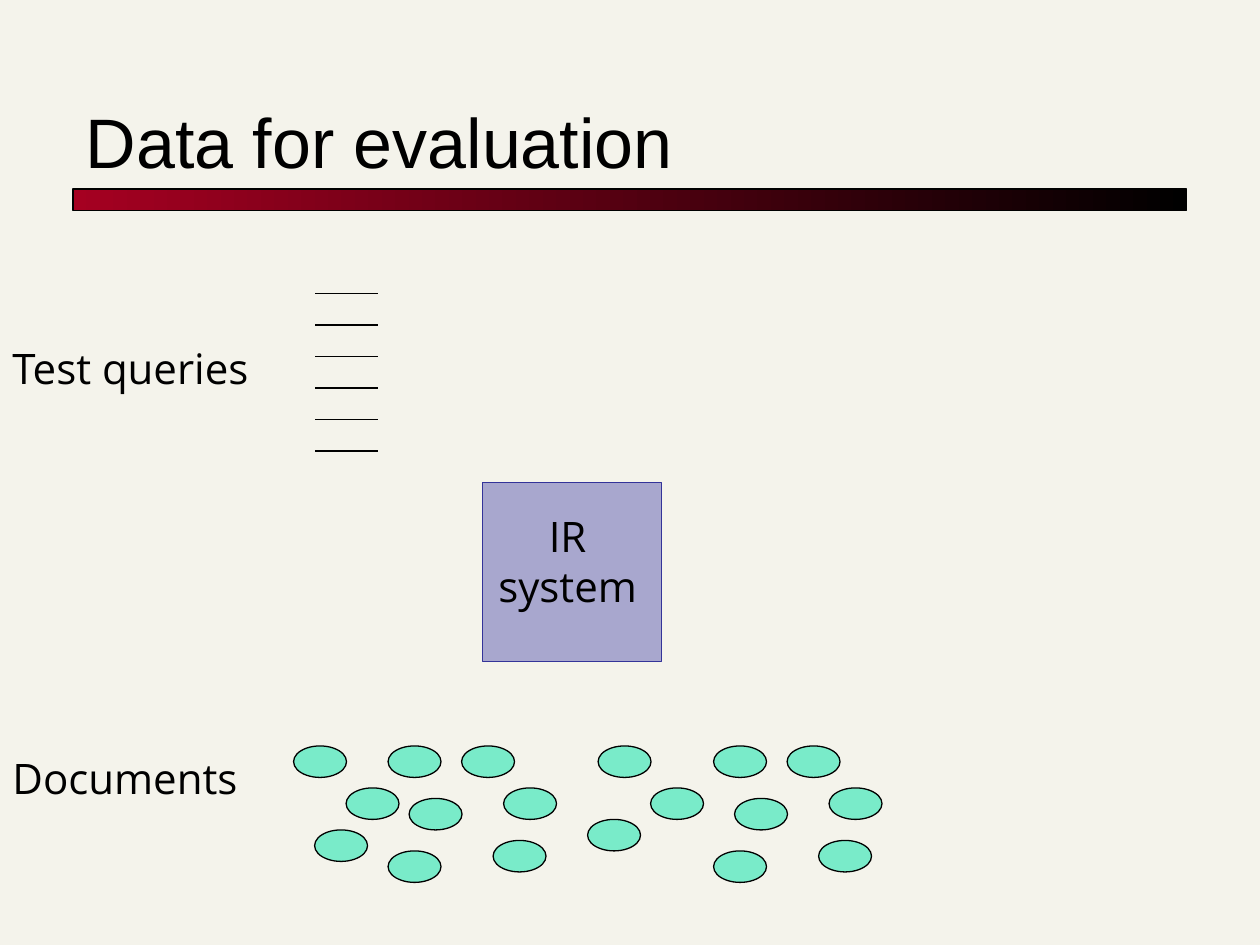
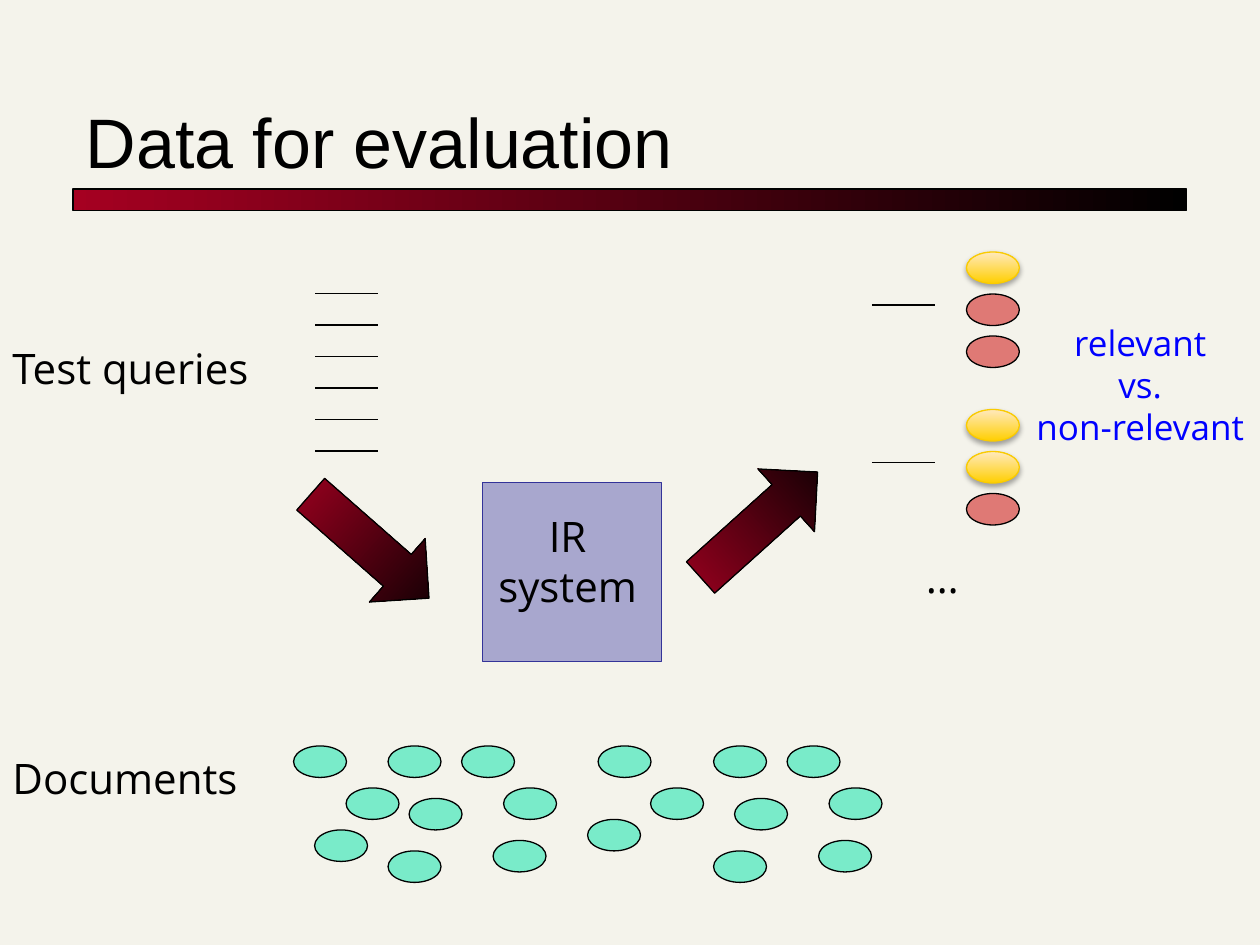
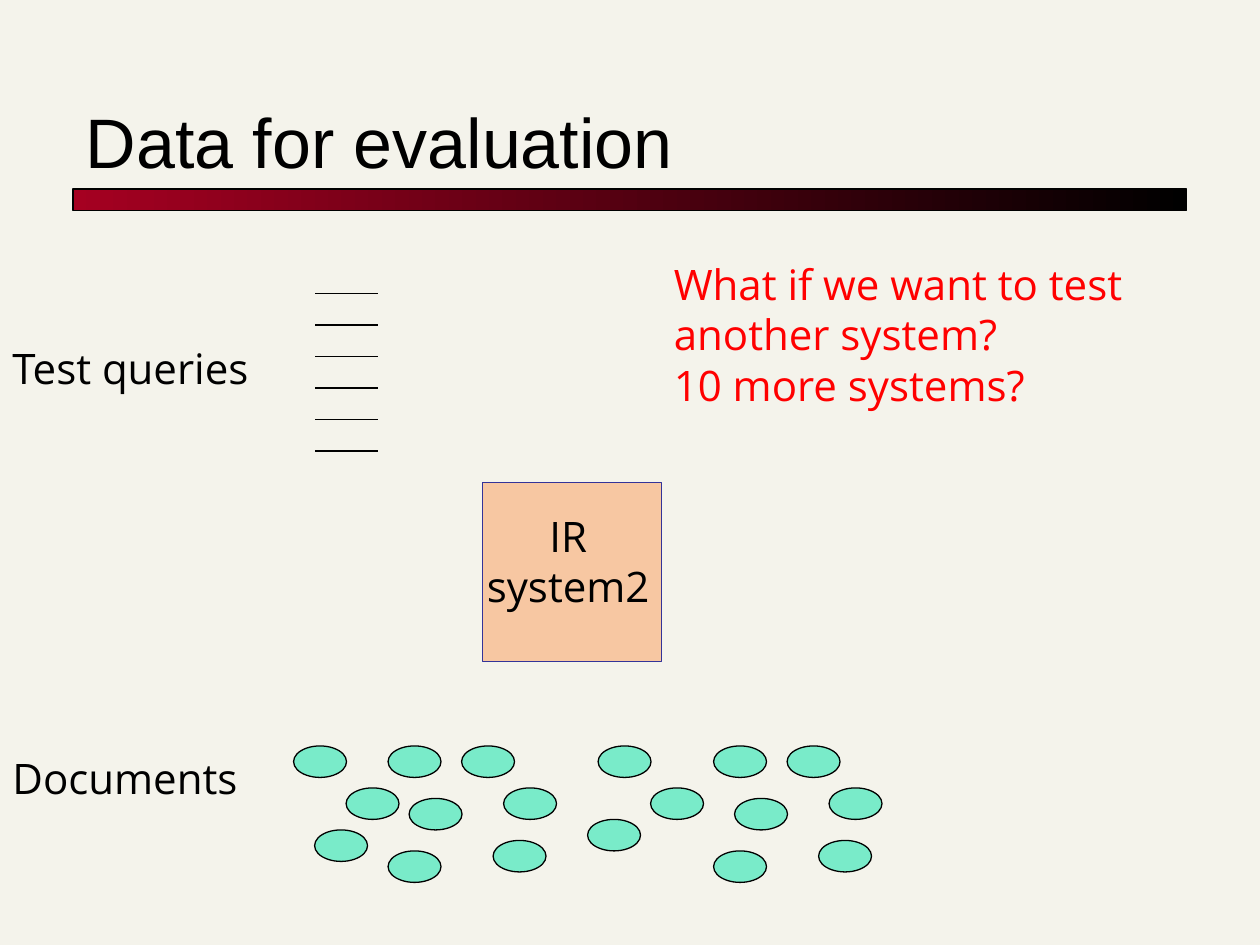
import pptx
import pptx.dml.color
import pptx.enum.shapes
import pptx.enum.text
import pptx.oxml.ns
import pptx.util
from lxml import etree
from pptx.util import Inches

SHAPE = pptx.enum.shapes.MSO_SHAPE
ALIGN = pptx.enum.text.PP_ALIGN
AUTO_SIZE = pptx.enum.text.MSO_AUTO_SIZE
qn = pptx.oxml.ns.qn

TITLE_FONT, BODY_FONT = "Arial", "Open Sans"
BACKGROUND, BLACK = "F4F3EB", "000000"
BAND_COLORS = ("A50021", BLACK)
GOLD_COLORS, GOLD_LINE = ("FFCF01", "FFE9BD"), "FACB00"
DOCUMENT, NON_RELEVANT = "00E4A8", "CC0000"
SYSTEM_LINE, SYSTEM_ONE, SYSTEM_TWO = "333399", "000090", "FF6600"
BLUE, RED = "0000FF", "FF0000"

OVAL_SIZE = (0.42, 0.25)
DOCUMENT_GRID = 1 / 12
DOCUMENT_CELLS = [
    (9, 0), (16, 0), (20, 4), (11, 5), (5, 4), (2, 8), (0, 0), (9, 10), (29, 0),
    (19, 9), (28, 7), (34, 4), (40, 0), (47, 0), (51, 4), (42, 5), (40, 10), (50, 9),
]


def color(hex_string):
    return pptx.dml.color.RGBColor.from_string(hex_string)


def fill_solid(shape, hex_string, opacity):
    """Fill with one colour; opacity is in percent."""
    shape.fill.solid()
    shape.fill.fore_color.rgb = color(hex_string)
    rgb = shape.fill._xPr.find(qn("a:solidFill"))[0]
    etree.SubElement(rgb, qn("a:alpha"), val=str(opacity * 1000))


def fill_gradient(shape, hex_strings, angle=0):
    shape.fill.gradient()
    shape.fill.gradient_angle = angle
    for stop, hex_string in zip(shape.fill.gradient_stops, hex_strings):
        stop.color.rgb = color(hex_string)


def add_outlined(shapes, kind, left, top, size, line=BLACK):
    width, height = size
    shape = shapes.add_shape(kind, Inches(left), Inches(top), Inches(width), Inches(height))
    shape.shadow.inherit = False
    shape.line.color.rgb = color(line)
    shape.line.width = pptx.util.Pt(0.75)
    return shape


def add_oval(shapes, left, top, hex_string):
    fill_solid(add_outlined(shapes, SHAPE.OVAL, left, top, OVAL_SIZE), hex_string, 50)


def add_gold_oval(shapes, left, top):
    oval = add_outlined(shapes, SHAPE.OVAL, left, top, OVAL_SIZE, GOLD_LINE)
    fill_gradient(oval, GOLD_COLORS, 90)
    effects = oval._element.spPr.find(qn("a:effectLst"))
    shadow = etree.SubElement(effects, qn("a:outerShdw"), blurRad="40000", dist="23000",
                              dir="5400000", rotWithShape="0")
    rgb = etree.SubElement(shadow, qn("a:srgbClr"), val=BLACK)
    etree.SubElement(rgb, qn("a:alpha"), val="35000")


def add_query_line(slide, left, top):
    line = slide.shapes.add_connector(
        pptx.enum.shapes.MSO_CONNECTOR.STRAIGHT,
        Inches(left), Inches(top), Inches(left + 0.5), Inches(top))
    line.line.color.rgb = color(BLACK)
    line.line.width = pptx.util.Pt(0.75)
    etree.SubElement(line._element.spPr, qn("a:effectLst"))


def add_run(paragraph, text, size, hex_string=BLACK, font=BODY_FONT):
    run = paragraph.add_run()
    run.text = text
    run.font.size = pptx.util.Pt(size)
    run.font.name = font
    run.font.color.rgb = color(hex_string)


def add_text(slide, box, paragraphs, size=24, hex_string=BLACK, align=ALIGN.LEFT, wrap=False):
    """Add a text box; each paragraph is a list of lines."""
    text_box = slide.shapes.add_textbox(*(Inches(value) for value in box))
    frame = text_box.text_frame
    frame.word_wrap = wrap
    frame.auto_size = AUTO_SIZE.SHAPE_TO_FIT_TEXT
    for index, lines in enumerate(paragraphs):
        paragraph = frame.add_paragraph() if index else frame.paragraphs[0]
        paragraph.alignment = align
        for line_index, line in enumerate(lines):
            if line_index:
                paragraph.add_line_break()
            add_run(paragraph, line, size, hex_string)


def add_title(slide, left, top, width, height, text):
    """Place the title with the gradient band along its lower edge."""
    band = add_outlined(slide.shapes, SHAPE.RECTANGLE, left, top + height, (width, 0.17))
    fill_gradient(band, BAND_COLORS)
    title = slide.shapes.title
    title.left, title.top = Inches(left), Inches(top)
    title.width, title.height = Inches(width), Inches(height)
    frame = title.text_frame
    frame.word_wrap = True
    frame.auto_size = AUTO_SIZE.NONE
    frame.vertical_anchor = pptx.enum.text.MSO_ANCHOR.BOTTOM
    frame.paragraphs[0].alignment = ALIGN.LEFT
    add_run(frame.paragraphs[0], text, 40, font=TITLE_FONT)


def add_documents(slide, left, top):
    group = slide.shapes.add_group_shape()
    for column, row in DOCUMENT_CELLS:
        add_oval(group.shapes, left + 2.33 + column * DOCUMENT_GRID,
                 top + row * DOCUMENT_GRID, DOCUMENT)
    add_text(slide, (left, top, 2.05, 0.5), [["Documents"]])


def add_test_queries(slide, left, top):
    for index in range(6):
        add_query_line(slide, left + 2.5, top + index * 0.25)
    add_text(slide, (left, top + 0.34, 2.21, 0.5), [["Test queries"]])


def add_system(slide, left, top, name, hex_string, label_left, label_width):
    box = add_outlined(slide.shapes, SHAPE.RECTANGLE, left, top, (1.42, 1.42), SYSTEM_LINE)
    fill_solid(box, hex_string, 31)
    add_text(slide, (left + label_left, top + 0.17, label_width, 0.91),
             [["IR", name]], align=ALIGN.CENTER)


def add_flow_arrow(slide, left, top, rotation):
    arrow = add_outlined(slide.shapes, SHAPE.RIGHT_ARROW, left, top, (1.25, 0.67))
    fill_gradient(arrow, BAND_COLORS)
    arrow.rotation = rotation


def add_judged_query(slide, left, top, judgements):
    """Draw a query line and its results; True marks a relevant one."""
    add_query_line(slide, left, top + 0.42)
    for index, relevant in enumerate(judgements):
        place = (left + 0.75, top + index / 3)
        if relevant:
            add_gold_oval(slide.shapes, *place)
        else:
            add_oval(slide.shapes, *place, NON_RELEVANT)


def add_judgements(slide, left, top):
    add_judged_query(slide, left, top, (True, False, False))
    add_judged_query(slide, left, top + 1.25, (True, True, False))
    add_text(slide, (left + 0.33, top + 2.33, 0.54, 0.5), [["…"]])
    add_text(slide, (left + 1.18, top + 0.5, 1.9, 1.11),
             [["relevant"], ["vs."], ["non-relevant"]], 20, BLUE, ALIGN.CENTER)


def add_evaluation_slide(presentation, system="system", system_color=SYSTEM_ONE,
                         label_left=0, label_width=1.35):
    slide = presentation.slides.add_slide(presentation.slide_layouts.get_by_name("Title Only"))
    add_title(slide, 0.58, 0.42, 8.84, 1.08, "Data for evaluation")
    add_documents(slide, 0, 5.92)
    add_test_queries(slide, 0, 2.33)
    add_system(slide, 3.83, 3.83, system, system_color, label_left, label_width)
    return slide


def main():
    presentation = pptx.Presentation()
    presentation.slide_width, presentation.slide_height = Inches(10), Inches(7.5)
    background = presentation.slide_master.background.fill
    background.solid()
    background.fore_color.rgb = color(BACKGROUND)

    add_evaluation_slide(presentation)

    results_slide = add_evaluation_slide(presentation)
    add_flow_arrow(results_slide, 2.31, 4, 41.3)
    add_flow_arrow(results_slide, 5.4, 3.83, 318)
    add_judgements(results_slide, 6.92, 2)

    question_slide = add_evaluation_slide(presentation, "system2", SYSTEM_TWO, -0.1, 1.56)
    add_text(question_slide, (5.25, 2, 4, 1.31),
             [["What if we want to test"], ["another system?", "10 more systems?"]],
             hex_string=RED, wrap=True)

    presentation.save("out.pptx")


if __name__ == "__main__":
    main()
